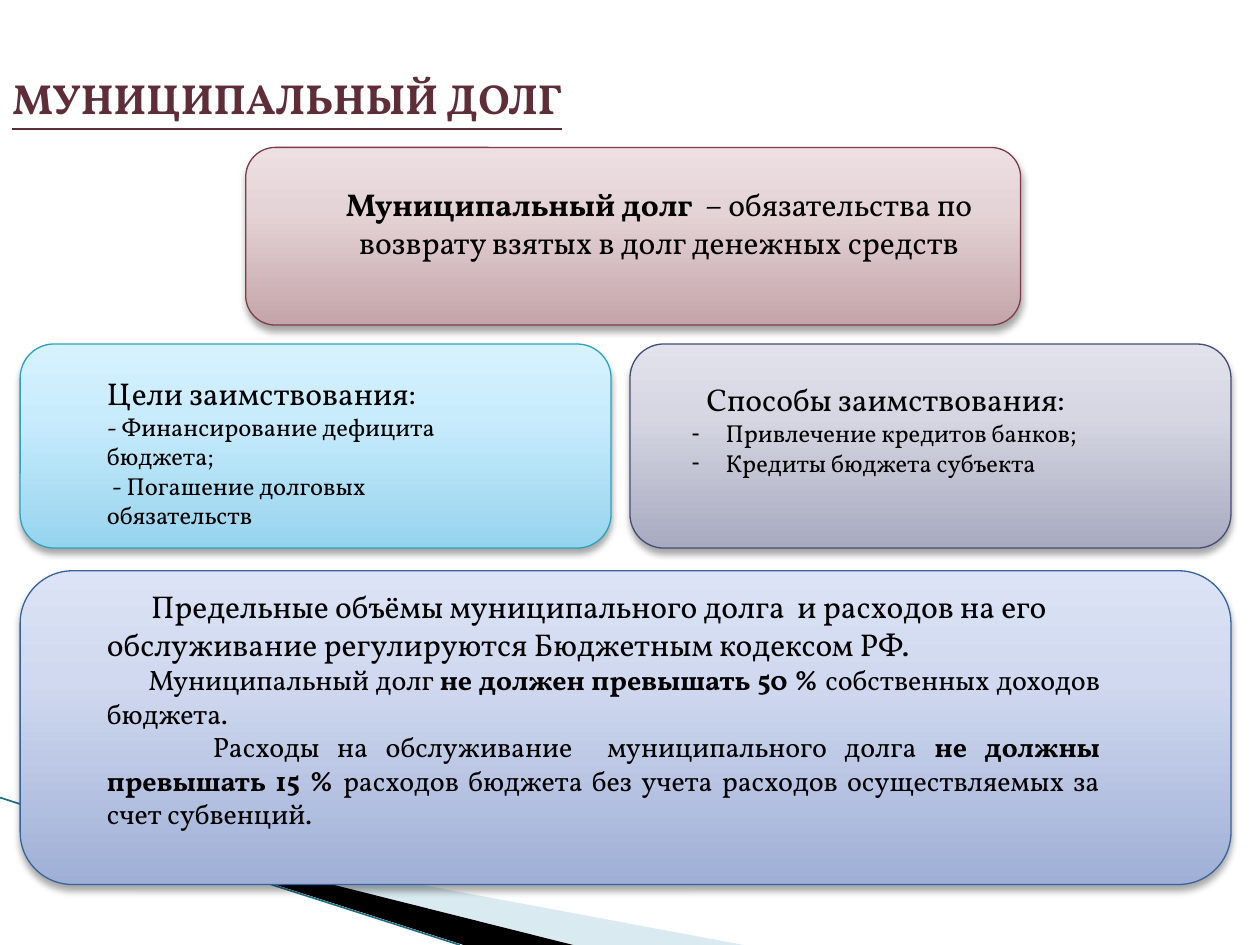
from copy import deepcopy

from lxml.etree import SubElement
from pptx import Presentation
from pptx.dml.color import RGBColor
from pptx.enum.shapes import MSO_CONNECTOR, MSO_SHAPE
from pptx.enum.text import MSO_ANCHOR, PP_ALIGN
from pptx.oxml.ns import qn
from pptx.util import Inches, Pt

FONT = "Vollkorn"
BLACK = RGBColor(0x00, 0x00, 0x00)
TITLE_WINE = RGBColor(0x5E, 0x2D, 0x37)
SWOOSH_BLUE = RGBColor(0xA0, 0xCB, 0xDC)
SWOOSH_EDGE = RGBColor(0x1F, 0x6E, 0x85)

WINE = [RGBColor.from_string(c) for c in ("C4A5A9", "E5D4D7", "EEE0E2", "7D3C4A")]
CYAN = [RGBColor.from_string(c) for c in ("96D4EE", "C9ECFC", "D7F2FF", "2DA2BF")]
VIOLET = [RGBColor.from_string(c) for c in ("A8AAC0", "D6D7E3", "E2E2EC", "474B78")]
BLUE = [RGBColor.from_string(c) for c in ("9FAFD6", "D0D9EF", "DCE3F6", "39639D")]


def add_swoosh(slide, points, color, opacity=None):
    corners = [(Inches(x), Inches(y)) for x, y in points]
    builder = slide.shapes.build_freeform(*corners[0])
    builder.add_line_segments(corners[1:])
    swoosh = builder.convert_to_shape()
    swoosh.shadow.inherit = False
    swoosh.fill.solid()
    swoosh.fill.fore_color.rgb = color
    swoosh.line.fill.background()
    if opacity is not None:
        srgb = swoosh._element.spPr.find(".//" + qn("a:srgbClr"))
        SubElement(srgb, qn("a:alpha"), val=str(opacity * 1000))


def add_background(slide):
    add_swoosh(slide, [(0.55, 6.5), (5.9, 7.5), (4.56, 7.5)], SWOOSH_BLUE, 40)
    add_swoosh(slide, [(0.53, 6.49), (4.55, 7.5), (3.68, 7.5)], BLACK)
    edge = slide.shapes.add_connector(
        MSO_CONNECTOR.STRAIGHT, 0, Inches(6.33), Inches(3.65), Inches(7.5))
    edge.line.color.rgb = SWOOSH_EDGE
    edge.line.width = Pt(0.95)
    SubElement(edge._element.spPr, qn("a:effectLst"))


def add_panel(slide, box, palette):
    panel = slide.shapes.add_shape(MSO_SHAPE.ROUNDED_RECTANGLE, *map(Inches, box))
    panel.fill.gradient()
    panel.fill.gradient_angle = 90
    stop_list = panel._element.spPr.find(".//" + qn("a:gsLst"))
    stop_list.append(deepcopy(stop_list[-1]))
    for stop, position, color in zip(panel.fill.gradient_stops, (0, 0.65, 1), palette):
        stop.position = position
        stop.color.rgb = color
    panel.line.color.rgb = palette[-1]
    panel.line.width = Pt(0.75)
    panel.shadow.inherit = False
    effects = panel._element.spPr.find(qn("a:effectLst"))
    shadow = SubElement(effects, qn("a:outerShdw"), blurRad=str(Pt(4)),
                        dist=str(Pt(3)), dir="5400000", rotWithShape="0")
    shadow_color = SubElement(shadow, qn("a:srgbClr"), val="000000")
    SubElement(shadow_color, qn("a:alpha"), val="35000")


def add_text(slide, box, paragraphs):
    frame = slide.shapes.add_textbox(*map(Inches, box)).text_frame
    frame.word_wrap = True
    for i, (size, align, indent, runs) in enumerate(paragraphs):
        paragraph = frame.paragraphs[0] if i == 0 else frame.add_paragraph()
        paragraph.alignment = align
        properties = paragraph._p.get_or_add_pPr()
        properties.set("indent", str(Inches(indent)))
        if indent < 0:
            properties.set("marL", str(Inches(-indent)))
            SubElement(properties, qn("a:buFont"), typeface="Arial")
            SubElement(properties, qn("a:buChar"), char="-")
        paragraph.font.name = FONT
        paragraph.font.size = Pt(size)
        paragraph.font.color.rgb = BLACK
        for words, bold in runs:
            run = paragraph.add_run()
            run.text = words
            run.font.bold = bold
    return frame


def add_title(slide, box):
    frame = add_text(slide, box, [
        (24, PP_ALIGN.LEFT, 0, [("МУНИЦИПАЛЬНЫЙ ДОЛГ", True)])])
    frame.vertical_anchor = MSO_ANCHOR.MIDDLE
    font = frame.paragraphs[0].font
    font.color.rgb = TITLE_WINE
    font.underline = True


def add_definition(slide, box):
    left, top, width, _ = box
    add_panel(slide, box, WINE)
    add_text(slide, (left + 0.39, top + 0.25, width - 0.37, 0.71), [
        (18, PP_ALIGN.CENTER, 0, [
            ("Муниципальный долг  ", True),
            ("– обязательства по возврату взятых в долг денежных средств", False)])])


def add_goals(slide, box):
    left, top, _, _ = box
    add_panel(slide, box, CYAN)
    add_text(slide, (left + 0.59, top + 0.19, 3.42, 1.35), [
        (18, PP_ALIGN.LEFT, 0, [("Цели заимствования:", False)]),
        (14, PP_ALIGN.LEFT, 0, [("- Финансирование дефицита бюджета;", False)]),
        (14, PP_ALIGN.LEFT, 0.04, [("- Погашение долговых обязательств", False)])])


def add_methods(slide, box):
    left, top, _, _ = box
    add_panel(slide, box, VIOLET)
    add_text(slide, (left + 0.39, top + 0.24, 3.28, 0.88), [
        (18, PP_ALIGN.CENTER, 0, [("Способы заимствования:", False)]),
        (14, PP_ALIGN.LEFT, -0.27, [("Привлечение кредитов банков;", False)]),
        (14, PP_ALIGN.LEFT, -0.27, [("Кредиты бюджета субъекта", False)])])


def add_limits(slide, box):
    left, top, _, _ = box
    add_panel(slide, box, BLUE)
    add_text(slide, (left + 0.59, top + 0.08, 8.08, 2.05), [
        (18, PP_ALIGN.LEFT, 0.35, [
            ("Предельные объёмы муниципального долга  и расходов на его "
             "обслуживание регулируются Бюджетным кодексом РФ.", False)]),
        (16, PP_ALIGN.JUSTIFY, 0.33, [
            ("Муниципальный долг ", False),
            ("не должен превышать 50 % ", True),
            ("собственных доходов бюджета.", False)]),
        (16, PP_ALIGN.JUSTIFY, 0.84, [
            ("Расходы на обслуживание  муниципального долга ", False),
            ("не должны превышать 15 % ", True),
            ("расходов бюджета без учета расходов осуществляемых за "
             "счет субвенций.", False)])])


def main():
    deck = Presentation()
    deck.slide_width, deck.slide_height = Inches(10), Inches(7.5)
    slide = deck.slides.add_slide(deck.slide_layouts[6])
    add_background(slide)
    add_limits(slide, (0.16, 4.53, 9.61, 2.49))
    add_methods(slide, (5, 2.73, 4.77, 1.62))
    add_goals(slide, (0.16, 2.73, 4.69, 1.62))
    add_definition(slide, (1.95, 1.17, 6.15, 1.41))
    add_title(slide, (0, 0.23, 9, 1.09))
    deck.save("out.pptx")


if __name__ == "__main__":
    main()
